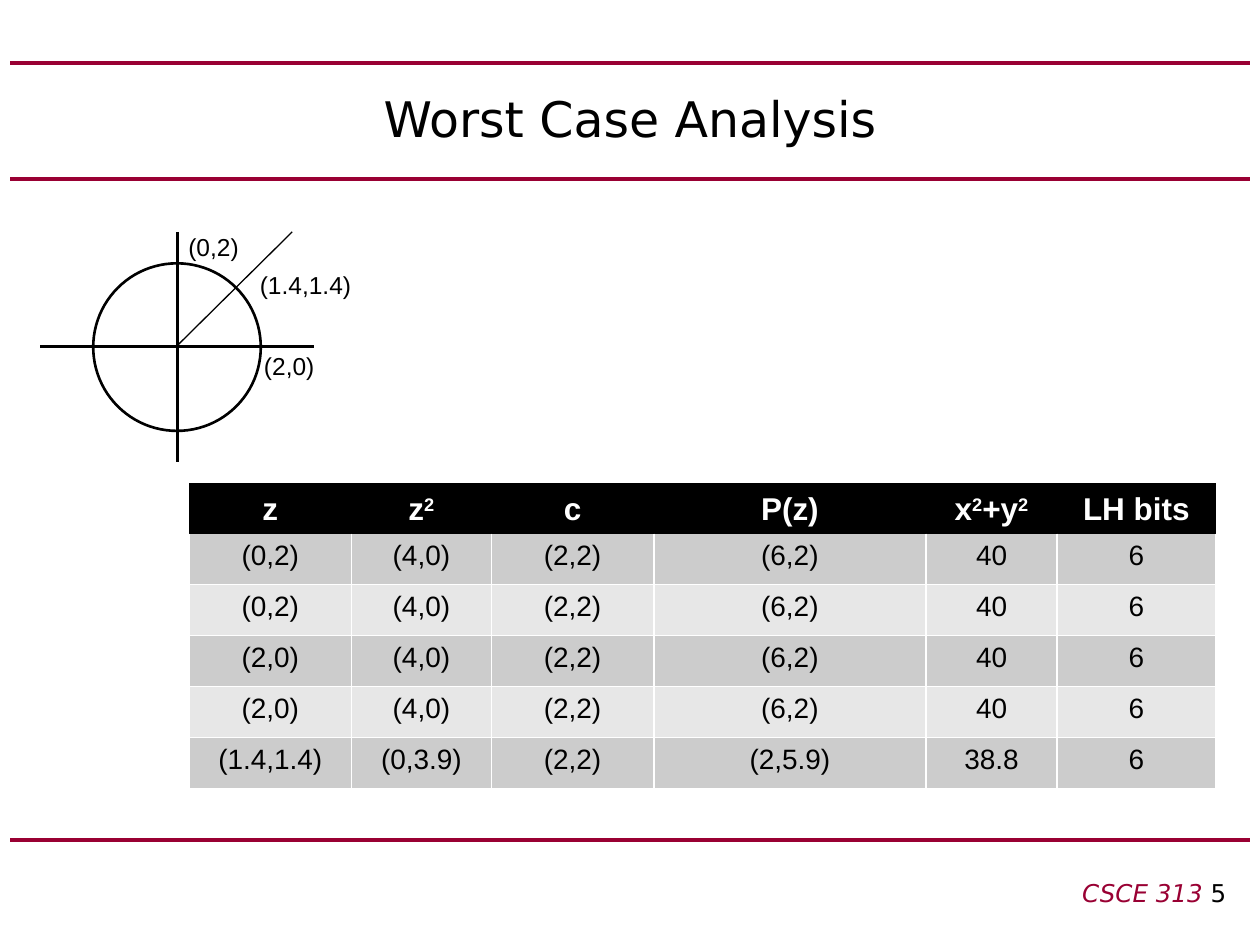
from lxml.etree import SubElement
from pptx import Presentation
from pptx.dml.color import RGBColor
from pptx.enum.shapes import MSO_CONNECTOR, MSO_SHAPE
from pptx.enum.text import MSO_ANCHOR, PP_ALIGN
from pptx.oxml.ns import qn
from pptx.util import Inches, Pt

COLORS = {"rule": "990033", "ink": "000000", "paper": "FFFFFF", "odd": "CCCCCC", "even": "E7E7E7"}
TITLE_FONT, BODY_FONT = "DejaVu Sans", "Arial"
NO_GRID_STYLE = "{2D5ABB26-0587-4C30-8999-92F81FD0307C}"

TITLE = "Worst Case Analysis"
COURSE, PAGE = "CSCE 313 ", "5"
RULE_HEIGHTS = [6.67, 1.42, 0.5]
AXES = [((1.41, 1.84), (1.41, 3.67)), ((2.49, 2.75), (0.32, 2.75))]
DIAGONAL = ((1.41, 2.74), (2.32, 1.84))
CIRCLE = (0.74, 2.09, 1.33, 1.33)
POINT_LABELS = [
    ("(2,0)", (1.92, 2.74, 0.75, 0.34)),
    ("(0,2)", (1.32, 1.79, 0.75, 0.34)),
    ("(1.4,1.4)", (1.82, 2.09, 1.21, 0.34)),
]
HEADERS = [["z"], ["z", "2"], ["c"], ["P(z)"], ["x", "2", "+y", "2"], ["LH bits"]]
ROWS = [
    ["(0,2)", "(4,0)", "(2,2)", "(6,2)", "40", "6"],
    ["(0,2)", "(4,0)", "(2,2)", "(6,2)", "40", "6"],
    ["(2,0)", "(4,0)", "(2,2)", "(6,2)", "40", "6"],
    ["(2,0)", "(4,0)", "(2,2)", "(6,2)", "40", "6"],
    ["(1.4,1.4)", "(0,3.9)", "(2,2)", "(2,5.9)", "38.8", "6"],
]
COLUMN_WIDTHS = [1.29, 1.11, 1.29, 2.16, 1.04, 1.26]
ROW_HEIGHT = 0.405


def color(name):
    return RGBColor.from_string(COLORS[name])


def add_run(paragraph, text, size, font, ink="ink", bold=False, italic=False):
    run = paragraph.add_run()
    run.text = text
    run.font.size, run.font.name = Pt(size), font
    run.font.bold, run.font.italic = bold, italic
    run.font.color.rgb = color(ink)
    return run


def add_line(slide, start, end, ink, width):
    points = [Inches(value) for value in (*start, *end)]
    line = slide.shapes.add_connector(MSO_CONNECTOR.STRAIGHT, *points)
    line.line.color.rgb = color(ink)
    line.line.width = Pt(width)
    SubElement(line._element.spPr, qn("a:effectLst"))


def add_text_box(slide, box, alignment):
    frame = slide.shapes.add_textbox(*map(Inches, box)).text_frame
    frame.word_wrap = True
    frame.paragraphs[0].alignment = alignment
    return frame.paragraphs[0]


def add_borders(cell, sides):
    properties = cell._tc.get_or_add_tcPr()
    for side in sides:
        border = SubElement(properties, qn(f"a:ln{side}"), w=str(Pt(1)))
        fill = SubElement(border, qn("a:solidFill"))
        SubElement(fill, qn("a:srgbClr"), val=COLORS["paper"])


def fill_cell(cell, fill):
    cell.fill.solid()
    cell.fill.fore_color.rgb = color(fill)
    paragraph = cell.text_frame.paragraphs[0]
    paragraph.alignment = PP_ALIGN.CENTER
    return paragraph


def add_results(slide):
    row_count = len(ROWS) + 1
    frame = slide.shapes.add_table(
        row_count, len(HEADERS), Inches(1.5), Inches(3.83),
        Inches(sum(COLUMN_WIDTHS)), Inches(ROW_HEIGHT * row_count))
    table = frame.table
    table._tbl.tblPr.find(qn("a:tableStyleId")).text = NO_GRID_STYLE
    for column, width in zip(table.columns, COLUMN_WIDTHS):
        column.width = Inches(width)
    for row in table.rows:
        row.height = Inches(ROW_HEIGHT)
    for column, parts in enumerate(HEADERS):
        cell = table.cell(0, column)
        cell.vertical_anchor = MSO_ANCHOR.BOTTOM
        paragraph = fill_cell(cell, "ink")
        for part in parts:
            run = add_run(paragraph, part, 18, BODY_FONT, "paper", bold=True)
            if part == "2":
                run._r.get_or_add_rPr().set("baseline", "30000")
    for index, values in enumerate(ROWS, start=1):
        for column, value in enumerate(values):
            cell = table.cell(index, column)
            add_borders(cell, "LRB" if index == 1 else "LRTB")
            paragraph = fill_cell(cell, "odd" if index % 2 else "even")
            add_run(paragraph, value, 16, BODY_FONT)


def main():
    presentation = Presentation()
    presentation.slide_width, presentation.slide_height = Inches(10), Inches(7.5)
    slide = presentation.slides.add_slide(presentation.slide_layouts[5])

    for height in RULE_HEIGHTS:
        add_line(slide, (0.08, height), (9.92, height), "rule", 2.25)

    title = slide.shapes.title
    title.left, title.top, title.width, title.height = map(Inches, (0.5, 0.5, 9, 0.87))
    title.text_frame.vertical_anchor = MSO_ANCHOR.MIDDLE
    paragraph = title.text_frame.paragraphs[0]
    paragraph.alignment = PP_ALIGN.CENTER
    add_run(paragraph, TITLE, 28, TITLE_FONT)

    footer = add_text_box(slide, (3.75, 6.92, 6.08, 0.33), PP_ALIGN.RIGHT)
    add_run(footer, COURSE, 14, TITLE_FONT, "rule", italic=True)
    add_run(footer, PAGE, 14, TITLE_FONT)

    for start, end in AXES:
        add_line(slide, start, end, "ink", 2)
    circle = slide.shapes.add_shape(MSO_SHAPE.OVAL, *map(Inches, CIRCLE))
    circle.shadow.inherit = False
    circle.fill.background()
    circle.line.color.rgb = color("ink")
    circle.line.width = Pt(1.5)
    for text, box in POINT_LABELS:
        add_run(add_text_box(slide, box, PP_ALIGN.CENTER), text, 14, BODY_FONT)
    add_line(slide, *DIAGONAL, "ink", 0.75)

    add_results(slide)
    presentation.save("out.pptx")


if __name__ == "__main__":
    main()
